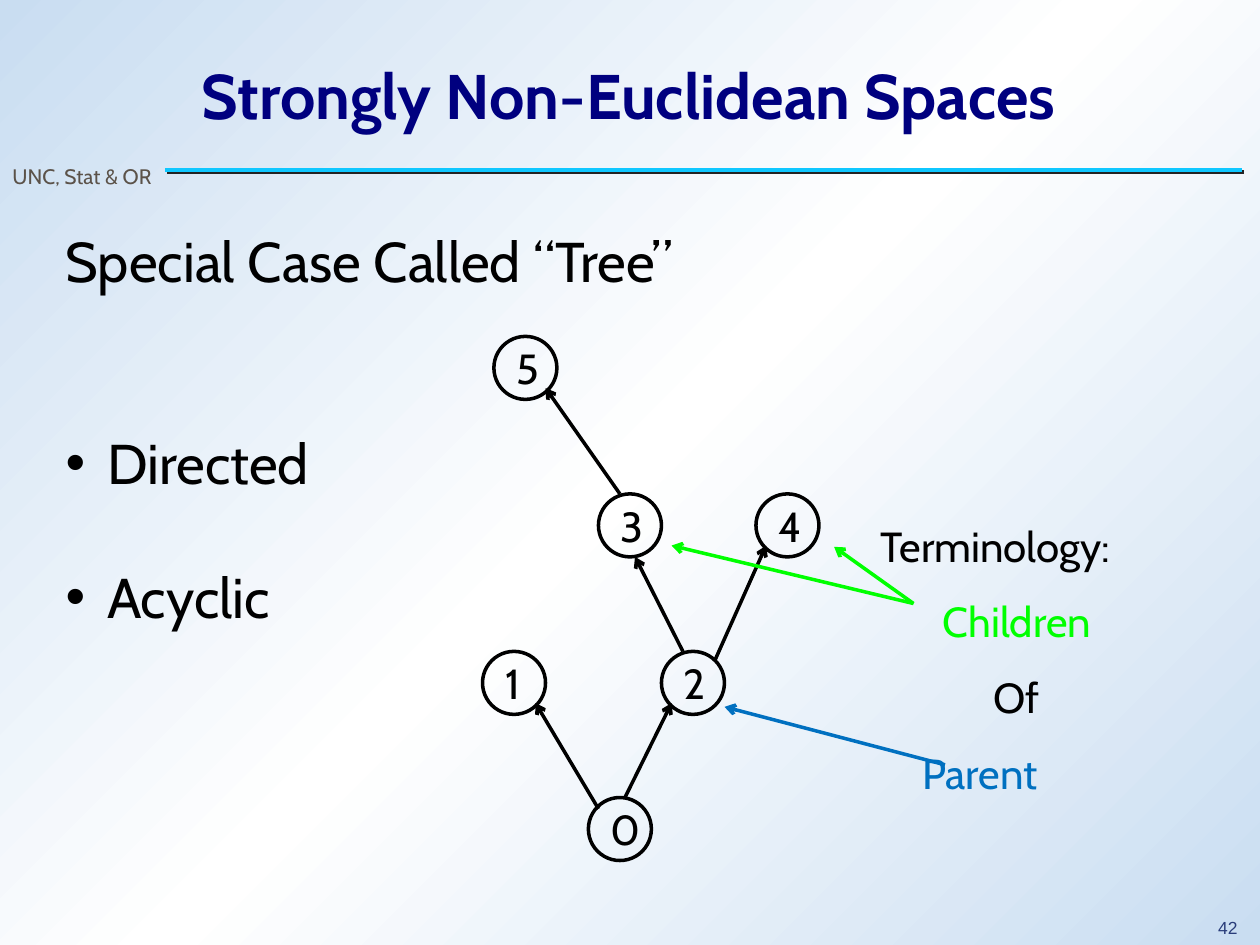
from typing import NamedTuple, Optional

from copy import deepcopy
from lxml import etree
from pptx import Presentation
from pptx.dml.color import RGBColor
from pptx.enum.shapes import MSO_CONNECTOR, MSO_SHAPE
from pptx.enum.text import MSO_ANCHOR, MSO_AUTO_SIZE, PP_ALIGN
from pptx.oxml.ns import qn
from pptx.util import Inches, Pt

STRAIGHT = MSO_CONNECTOR.STRAIGHT
OVAL = MSO_SHAPE.OVAL
LEFT, CENTER = PP_ALIGN.LEFT, PP_ALIGN.CENTER
MIDDLE, TOP = MSO_ANCHOR.MIDDLE, MSO_ANCHOR.TOP
NO_AUTOFIT = MSO_AUTO_SIZE.NONE

BLACK = RGBColor(0x00, 0x00, 0x00)
NAVY = RGBColor(0x00, 0x00, 0x7F)
PALE_BLUE = RGBColor(0xC9, 0xDD, 0xF1)
WHITE = RGBColor(0xFF, 0xFF, 0xFF)
CYAN = RGBColor(0x0F, 0xC7, 0xFF)
BROWN = RGBColor(0x5B, 0x52, 0x49)
INDIGO = RGBColor(0x2A, 0x3D, 0x7A)
GREEN = RGBColor(0x00, 0xFF, 0x00)
BLUE = RGBColor(0x00, 0x70, 0xC0)

FONT = "Cabin"
NODE_SIZE = 0.5
LABEL_OFFSET = 0.08


class Node(NamedTuple):
    label: str
    left: float
    top: float


class Arrow(NamedTuple):
    start: tuple[float, float]
    end: tuple[float, float]
    color: RGBColor = BLACK


class Line(NamedTuple):
    text: str
    color: RGBColor = BLACK
    alignment: PP_ALIGN = LEFT
    indent: float = 0


class Item(NamedTuple):
    text: str
    space_before: float = 0
    bulleted: bool = False


NODES = [
    Node("0", 4.67, 6.33),
    Node("1", 3.83, 5.17),
    Node("2", 5.25, 5.17),
    Node("3", 4.75, 3.92),
    Node("4", 6, 3.92),
    Node("5", 3.92, 2.67),
]
CHILDREN_START = (7.25, 4.79)
ARROWS = [
    Arrow((4.75, 6.42), (4.25, 5.58)),
    Arrow((4.92, 3.92), (4.33, 3.08)),
    Arrow((5.67, 5.25), (6.08, 4.33)),
    Arrow((5.42, 5.17), (5.04, 4.42)),
    Arrow((4.96, 6.33), (5.33, 5.58)),
    Arrow(CHILDREN_START, (5.33, 4.33), GREEN),
    Arrow(CHILDREN_START, (6.62, 4.34), GREEN),
    Arrow((7.5, 6.07), (5.75, 5.61), BLUE),
]
TERMINOLOGY = [
    Line("Terminology:"),
    Line("Children", GREEN, CENTER),
    Line("Of", BLACK, CENTER),
    Line("Parent", BLUE, LEFT, 0.33),
]
ITEMS = [
    Item("Special Case Called “Tree”"),
    Item("Directed", 76.6, True),
    Item("Acyclic", 38.3, True),
]


def place(shape, left: float, top: float, width: float, height: float) -> None:
    shape.left, shape.top = Inches(left), Inches(top)
    shape.width, shape.height = Inches(width), Inches(height)


def set_font(paragraph, size: float, color: RGBColor, name: str = FONT, bold: bool = False) -> None:
    font = paragraph.font
    font.name, font.size, font.bold = name, Pt(size), bold
    font.color.rgb = color


def set_indent(paragraph, margin: float, first_line: float = 0) -> None:
    properties = paragraph._p.get_or_add_pPr()
    properties.set("marL", str(Inches(margin)))
    properties.set("indent", str(Inches(first_line)))


def add_text(slide, box: tuple[float, float, float, float], lines: list[Line], size: float,
             name: str = FONT, spacing: Optional[float] = None, wrap: bool = True) -> None:
    frame = slide.shapes.add_textbox(*map(Inches, box)).text_frame
    frame.word_wrap = wrap
    for index, line in enumerate(lines):
        paragraph = frame.add_paragraph() if index else frame.paragraphs[0]
        paragraph.text = line.text
        paragraph.alignment = line.alignment
        paragraph.line_spacing = spacing
        if line.indent:
            set_indent(paragraph, line.indent)
        set_font(paragraph, size, line.color)
        paragraph.font.name = name


def add_line(slide, start: tuple[float, float], end: tuple[float, float],
             color: RGBColor, width: float):
    connector = slide.shapes.add_connector(STRAIGHT, *map(Inches, start + end))
    connector.line.color.rgb = color
    connector.line.width = Pt(width)
    etree.SubElement(connector.element.spPr, qn("a:effectLst"))
    return connector


def add_arrow(slide, arrow: Arrow) -> None:
    connector = add_line(slide, arrow.start, arrow.end, arrow.color, 2)
    outline = connector.element.spPr.find(qn("a:ln"))
    etree.SubElement(outline, qn("a:tailEnd"), type="arrow")


def add_node(slide, node: Node) -> None:
    box = map(Inches, (node.left, node.top, NODE_SIZE, NODE_SIZE))
    circle = slide.shapes.add_shape(OVAL, *box)
    circle.shadow.inherit = False
    circle.fill.background()
    circle.line.color.rgb = BLACK
    circle.line.width = Pt(2)
    label_box = (node.left + LABEL_OFFSET, node.top, NODE_SIZE - LABEL_OFFSET, NODE_SIZE)
    add_text(slide, label_box, [Line(node.label)], 24)


def set_background(slide) -> None:
    fill = slide.background.fill
    fill.gradient()
    fill.gradient_angle = 315
    stop_list = slide.element.find(".//" + qn("a:gsLst"))
    stop_list.insert(1, deepcopy(stop_list[0]))
    colors = (PALE_BLUE, WHITE, PALE_BLUE)
    for stop, color, position in zip(fill.gradient_stops, colors, (0, 0.5, 1)):
        stop.color.rgb = color
        stop.position = position


def add_header_rule(slide) -> None:
    rule = add_line(slide, (1.31, 1.35), (9.86, 1.35), CYAN, 2.25)
    effects = rule.element.spPr.find(qn("a:effectLst"))
    shadow = etree.SubElement(effects, qn("a:outerShdw"), dist=str(Pt(1.4)),
                              dir="2700000", algn="ctr", rotWithShape="0")
    etree.SubElement(shadow, qn("a:srgbClr"), val="232323")


def fill_title(title) -> None:
    place(title, 1.5, 0.33, 8.17, 0.83)
    frame = title.text_frame
    frame.text = "Strongly Non-Euclidean Spaces"
    frame.auto_size = NO_AUTOFIT
    frame.vertical_anchor = MIDDLE
    frame.paragraphs[0].alignment = LEFT
    set_font(frame.paragraphs[0], 36, NAVY, bold=True)


def fill_body(body) -> None:
    place(body, 0.42, 1.75, 5.67, 3.33)
    frame = body.text_frame
    frame.auto_size = NO_AUTOFIT
    frame.vertical_anchor = TOP
    for index, item in enumerate(ITEMS):
        paragraph = frame.add_paragraph() if index else frame.paragraphs[0]
        paragraph.text = item.text
        paragraph.space_before = Pt(item.space_before)
        properties = paragraph._p.get_or_add_pPr()
        if item.bulleted:
            set_indent(paragraph, 0.33, -0.33)
            etree.SubElement(properties, qn("a:buFont"), typeface="Arial")
            etree.SubElement(properties, qn("a:buChar"), char="•")
        else:
            set_indent(paragraph, 0)
            etree.SubElement(properties, qn("a:buNone"))
        set_font(paragraph, 32, BLACK)


def main() -> None:
    presentation = Presentation()
    presentation.slide_width, presentation.slide_height = Inches(10), Inches(7.5)
    slide = presentation.slides.add_slide(presentation.slide_layouts[1])
    set_background(slide)

    # Header and footer
    add_header_rule(slide)
    add_text(slide, (9.57, 7.25, 0.37, 0.25), [Line("42", INDIGO)], 10, "Arial", 0.9, wrap=False)
    add_text(slide, (0, 1.25, 1.35, 0.3), [Line("UNC, Stat & OR", BROWN)], 12, wrap=False)

    # Title and list
    fill_title(slide.shapes.title)
    fill_body(slide.placeholders[1])

    # Tree and its terminology
    for node in NODES:
        add_node(slide, node)
    add_text(slide, (6.89, 3.88, 2.36, 2.52), TERMINOLOGY, 24, spacing=1.5)
    for arrow in ARROWS:
        add_arrow(slide, arrow)

    presentation.save("out.pptx")


if __name__ == "__main__":
    main()
